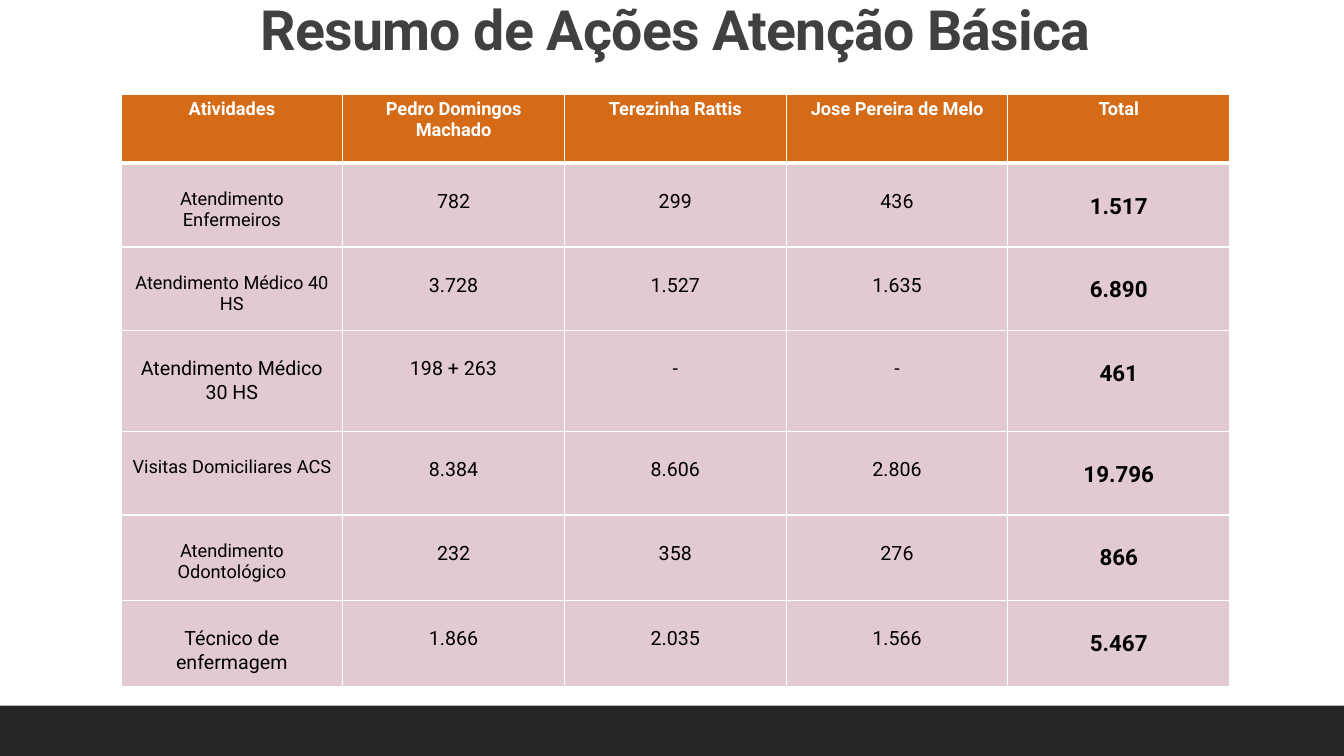
from dataclasses import dataclass

from lxml.etree import SubElement
from pptx import Presentation
from pptx.dml.color import RGBColor as Rgb
from pptx.enum.shapes import MSO_SHAPE as Shape
from pptx.enum.text import MSO_ANCHOR as Anchor, PP_ALIGN as Align
from pptx.oxml.ns import qn
from pptx.table import _Cell as Cell
from pptx.text.text import TextFrame
from pptx.util import Emu, Inches, Pt


@dataclass(frozen=True)
class Theme:
    font: str = "Roboto"
    white: str = "FFFFFF"
    black: str = "000000"
    title_ink: str = "404040"
    footer: str = "262626"
    header: str = "D56A17"
    body: str = "E1CAD0"
    title_size: float = 39.6
    small: float = 13
    regular: float = 14
    total: float = 16
    line_height: float = 1.17  # one Roboto line, as a share of its type size
    thin: float = 1
    thick: float = 3


@dataclass(frozen=True)
class TextStyle:
    size: float
    color: str
    bold: bool = False
    tracking: float = 0


@dataclass(frozen=True)
class Activity:
    name: str
    units: tuple[str, str, str]
    total: str
    rows: float  # height in grid rows
    name_size: float


THEME = Theme()
WIDTH, HEIGHT = Inches(13.33), Inches(7.5)
GRID_COLUMNS, GRID_ROWS = 160, 90

HEADINGS = ("Atividades", "Pedro Domingos Machado", "Terezinha Rattis",
            "Jose Pereira de Melo", "Total")
HEADER_ROWS = 8.16
ACTIVITIES = (
    Activity("Atendimento Enfermeiros", ("782", "299", "436"), "1.517", 9.96, THEME.small),
    Activity("Atendimento Médico 40 HS", ("3.728", "1.527", "1.635"), "6.890", 9.96, THEME.small),
    Activity("Atendimento Médico 30 HS", ("198 + 263", "-", "-"), "461", 12, THEME.regular),
    Activity("Visitas Domiciliares ACS", ("8.384", "8.606", "2.806"), "19.796", 9.96, THEME.small),
    Activity("Atendimento Odontológico", ("232", "358", "276"), "866", 10.2, THEME.small),
    Activity("Técnico de enfermagem", ("1.866", "2.035", "1.566"), "5.467", 10.2, THEME.regular),
)
TABLE_LEFT, TABLE_TOP, COLUMN_SPAN = 14.4, 11.28, 26.4
TABLE_SPAN = COLUMN_SPAN * len(HEADINGS)


def across(columns: float) -> Emu:
    return Emu(round(WIDTH * columns / GRID_COLUMNS))


def down(rows: float) -> Emu:
    return Emu(round(HEIGHT * rows / GRID_ROWS))


def write(frame: TextFrame, text: str, style: TextStyle) -> None:
    frame.word_wrap = True
    paragraph = frame.paragraphs[0]
    paragraph.alignment = Align.CENTER
    run = paragraph.add_run()
    run.text = text
    run.font.name = THEME.font
    run.font.size = Pt(style.size)
    run.font.bold = style.bold
    run.font.color.rgb = Rgb.from_string(style.color)
    if style.tracking:
        run.font._element.set("spc", str(round(style.tracking * 100)))


def add_border(cell: Cell, side: str, width: float) -> None:
    line = SubElement(cell._tc.get_or_add_tcPr(), qn(f"a:ln{side}"), w=str(Pt(width)))
    SubElement(SubElement(line, qn("a:solidFill")), qn("a:srgbClr"), val=THEME.white)


def fill_cell(cell: Cell, text: str, style: TextStyle, fill: str,
              top: float, bottom: float, lowered: bool) -> None:
    cell.margin_left = cell.margin_right = Inches(0.08)
    cell.margin_bottom = Inches(0.04)
    drop = Pt(style.size * THEME.line_height) if lowered else 0
    cell.margin_top = Inches(0.04) + drop
    for side, width in zip("LRTB", (THEME.thin, THEME.thin, top, bottom)):
        add_border(cell, side, width)
    cell.fill.solid()
    cell.fill.fore_color.rgb = Rgb.from_string(fill)
    write(cell.text_frame, text, style)


def main() -> None:
    deck = Presentation()
    deck.slide_width, deck.slide_height = WIDTH, HEIGHT
    slide = deck.slides.add_slide(deck.slide_layouts[6])

    # Footer band
    footer = slide.shapes.add_shape(Shape.RECTANGLE, 0, down(84), WIDTH, down(6))
    footer.shadow.inherit = False
    footer.fill.solid()
    footer.fill.fore_color.rgb = Rgb.from_string(THEME.footer)
    footer.line.fill.background()

    # Title
    title = slide.shapes.add_textbox(
        across(TABLE_LEFT), down(0.36), across(TABLE_SPAN), down(7)).text_frame
    title.margin_left = title.margin_right = title.margin_top = title.margin_bottom = 0
    title.vertical_anchor = Anchor.TOP
    write(title, "Resumo de Ações Atenção Básica",
          TextStyle(THEME.title_size, THEME.title_ink, True, -0.5))
    title.paragraphs[0].line_spacing = 0.9

    # Table grid
    row_spans = [HEADER_ROWS] + [activity.rows for activity in ACTIVITIES]
    summary = slide.shapes.add_table(
        len(row_spans), len(HEADINGS), across(TABLE_LEFT), down(TABLE_TOP),
        across(TABLE_SPAN), down(sum(row_spans))).table
    summary.horz_banding = False
    for column in summary.columns:
        column.width = across(COLUMN_SPAN)
    for row, span in zip(summary.rows, row_spans):
        row.height = down(span)

    # Header row
    heading_style = TextStyle(THEME.small, THEME.white, True)
    for index, heading in enumerate(HEADINGS):
        fill_cell(summary.cell(0, index), heading, heading_style, THEME.header,
                  THEME.thin, THEME.thick, lowered=False)

    # Activity rows
    unit_style = TextStyle(THEME.regular, THEME.black)
    total_style = TextStyle(THEME.total, THEME.black, True)
    for number, activity in enumerate(ACTIVITIES, start=1):
        texts = (activity.name, *activity.units, activity.total)
        name_style = TextStyle(activity.name_size, THEME.black)
        styles = (name_style, *[unit_style] * len(activity.units), total_style)
        top = THEME.thick if number == 1 else THEME.thin
        for index, (text, style) in enumerate(zip(texts, styles)):
            fill_cell(summary.cell(number, index), text, style, THEME.body,
                      top, THEME.thin, lowered=True)

    deck.save("out.pptx")


if __name__ == "__main__":
    main()
